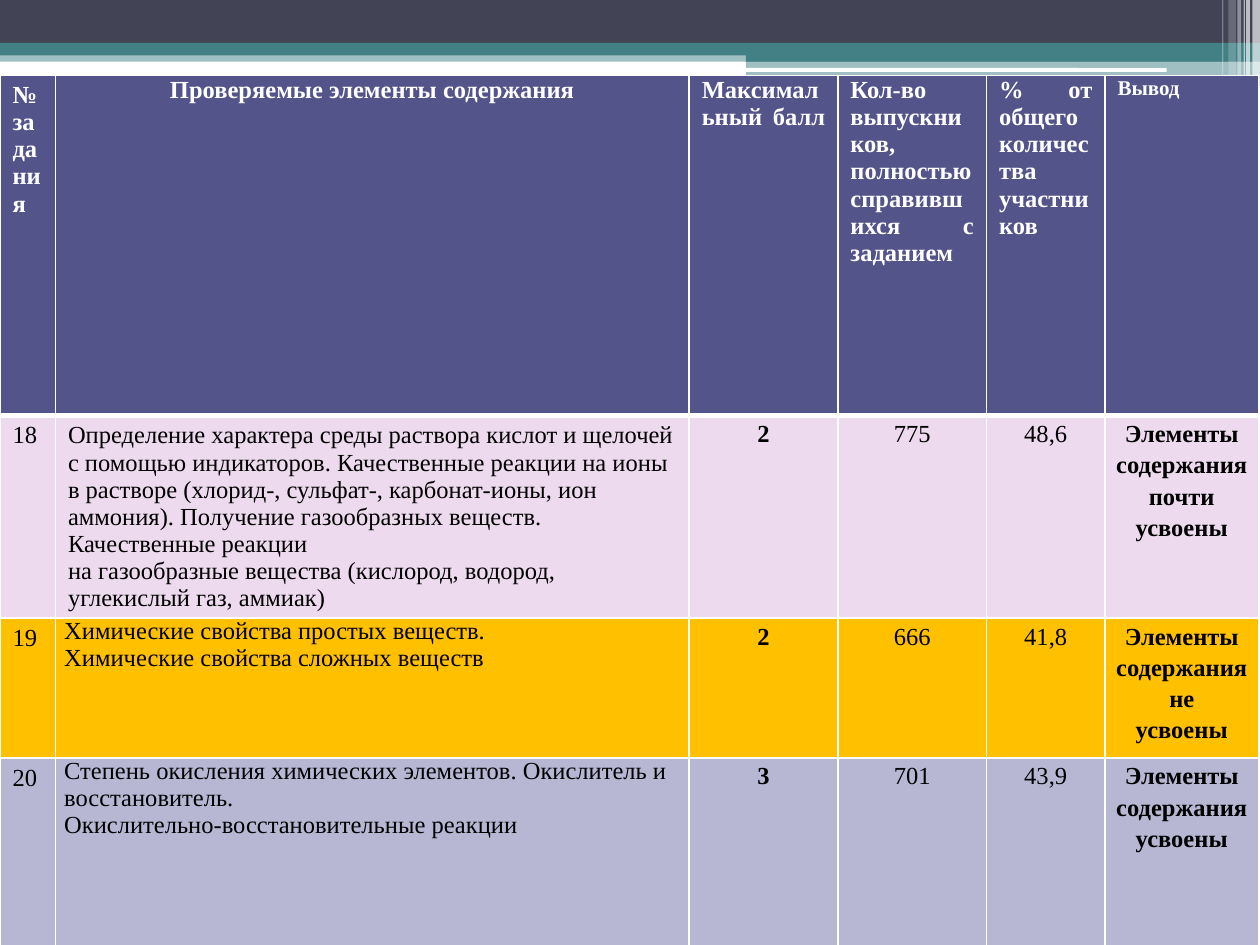
import dataclasses

import lxml.etree
import pptx
import pptx.dml.color
import pptx.enum.shapes
import pptx.enum.text
import pptx.oxml.ns
import pptx.util


@dataclasses.dataclass(frozen=True)
class Theme:
    font: str = "Times New Roman"
    size: int = 14
    small: int = 12
    white: str = "FFFFFF"
    black: str = "000000"
    slate: str = "424456"
    teal: str = "438086"
    header: str = "53548A"
    almost: str = "EDDAEE"
    failed: str = "FFC000"
    learned: str = "B7B7D4"


theme = Theme()
align = pptx.enum.text.PP_ALIGN
shapes = pptx.enum.shapes.MSO_SHAPE
rgb = pptx.dml.color.RGBColor.from_string
qn = pptx.oxml.ns.qn

deck = pptx.Presentation()
deck.slide_width = pptx.util.Inches(10)
deck.slide_height = pptx.util.Inches(7.5)
page = deck.slides.add_slide(deck.slide_layouts[6])


def across(percent):
    return round(deck.slide_width * percent / 100)


def down(percent):
    return round(deck.slide_height * percent / 100)


# Top decoration: left, top, width, height in percent of the slide, colour, opacity
bars = [
    (0, 5.33, 100, 1.2, theme.teal, 50),
    (0, 0, 100, 4.53, theme.slate, 100),
    (0, 4.53, 100, 1.33, theme.teal, 100),
    (59.2, 5.2, 40.8, 1.33, theme.teal, 100),
    (59.2, 6.4, 40.8, 2.67, theme.teal, 50),
]
rounded_bars = [
    (59.1, 7.2, 33.5, 0.4, theme.white, 100),
    (80.6, 8.53, 17.5, 0.53, theme.white, 100),
]
stripes = [
    (left, 0, width, height, theme.white, opacity)
    for left, width, height, opacity in [
        (99.4, 0.6, 9.07, 65),
        (98.9, 0.3, 9.07, 65),
        (98.7, 0.1, 9.07, 60),
        (98.2, 0.3, 9.07, 40),
        (97.5, 0.6, 8.53, 20),
        (97, 0.1, 8.53, 30),
    ]
]
for kind, group in [
    (shapes.RECTANGLE, bars),
    (shapes.ROUNDED_RECTANGLE, rounded_bars),
    (shapes.RECTANGLE, stripes),
]:
    for left, top, width, height, colour, opacity in group:
        bar = page.shapes.add_shape(
            kind, across(left), down(top), across(width), down(height))
        bar.shadow.inherit = False
        bar.line.fill.background()
        bar.fill.solid()
        bar.fill.fore_color.rgb = rgb(colour)
        if opacity < 100:
            colour_xml = bar.fill._xPr.find(".//" + qn("a:srgbClr"))
            lxml.etree.SubElement(colour_xml, qn("a:alpha"), val=str(opacity * 1000))

# Results table: each cell is a list of paragraphs
column_shares = [4.4, 50.3, 11.8, 11.8, 9.4, 12.2]
row_shares = [36, 18.93, 14.8, 22.27]
row_fills = [theme.header, theme.almost, theme.failed, theme.learned]
results = [
    [["№", "задания"], ["Проверяемые элементы содержания"], ["Максимальный балл "],
     ["Кол-во выпускников, полностью справившихся с заданием"],
     ["% от общего количества участников "], ["Вывод "]],
    [["18"],
     ["Определение характера среды раствора кислот и щелочей с помощью "
      "индикаторов. Качественные реакции на ионы в растворе (хлорид-, сульфат-, "
      "карбонат-ионы, ион аммония). Получение газообразных веществ. "
      "Качественные реакции",
      "на газообразные вещества (кислород, водород, углекислый газ, аммиак)"],
     ["2"], ["775"], ["48,6"], ["Элементы содержания почти усвоены"]],
    [["19"],
     ["Химические свойства простых веществ.", "Химические свойства сложных веществ"],
     ["2"], ["666"], ["41,8"], ["Элементы содержания не", "усвоены"]],
    [["20"],
     ["Степень окисления химических элементов. Окислитель и восстановитель.",
      "Окислительно-восстановительные реакции"],
     ["3"], ["701"], ["43,9"], ["Элементы содержания усвоены"]],
]
# Cell margins in inches: left, top, right, bottom
roomy = (0.1, 0.05, 0.1, 0.05)
heading = (0.1, 0.01, 0.1, 0.05)
tight = (0.07, 0.01, 0.07, 0)
flush = (0.07, 0, 0.07, 0)
margins = [
    [roomy, tight] + [heading] * 4,
    [roomy, roomy] + [tight] * 4,
    [roomy, flush] + [tight] * 4,
    [roomy, flush] + [tight] * 4,
]
bold_columns = (2, 5)

table = page.shapes.add_table(
    len(row_shares), len(column_shares), 0, down(8),
    across(100), down(sum(row_shares))).table
table.first_row = False
table.horz_banding = False
for column, share in zip(table.columns, column_shares):
    column.width = across(share)
for row, share in zip(table.rows, row_shares):
    row.height = down(share)

for r, row in enumerate(results):
    is_header = r == 0
    for c, paragraphs in enumerate(row):
        cell = table.cell(r, c)
        for side, inset in zip(("left", "top", "right", "bottom"), margins[r][c]):
            setattr(cell, f"margin_{side}", pptx.util.Inches(inset))

        borders = {"L": 1, "R": 1, "T": 3 if r == 1 else 1, "B": 3 if is_header else 1}
        for side, points in borders.items():
            line = lxml.etree.SubElement(
                cell._tc.get_or_add_tcPr(), qn(f"a:ln{side}"),
                w=str(pptx.util.Pt(points)))
            paint = lxml.etree.SubElement(line, qn("a:solidFill"))
            lxml.etree.SubElement(paint, qn("a:srgbClr"), val=theme.white)
        cell.fill.solid()
        cell.fill.fore_color.rgb = rgb(row_fills[r])

        if is_header:
            layout = {"alignment": align.CENTER if c == 1 else align.JUSTIFY}
        elif c < 2:
            layout = {"alignment": align.LEFT}
        else:
            layout = {"alignment": align.CENTER, "line_spacing": 1.15}
        type_format = {
            "name": theme.font,
            "size": pptx.util.Pt(theme.small if is_header and c == 5 else theme.size),
            "bold": is_header or c in bold_columns,
        }
        frame = cell.text_frame
        for index, text in enumerate(paragraphs):
            para = frame.add_paragraph() if index else frame.paragraphs[0]
            for name, value in layout.items():
                setattr(para, name, value)
            span = para.add_run()
            span.text = text
            for name, value in type_format.items():
                setattr(span.font, name, value)
            span.font.color.rgb = rgb(theme.white if is_header else theme.black)

deck.save("out.pptx")
